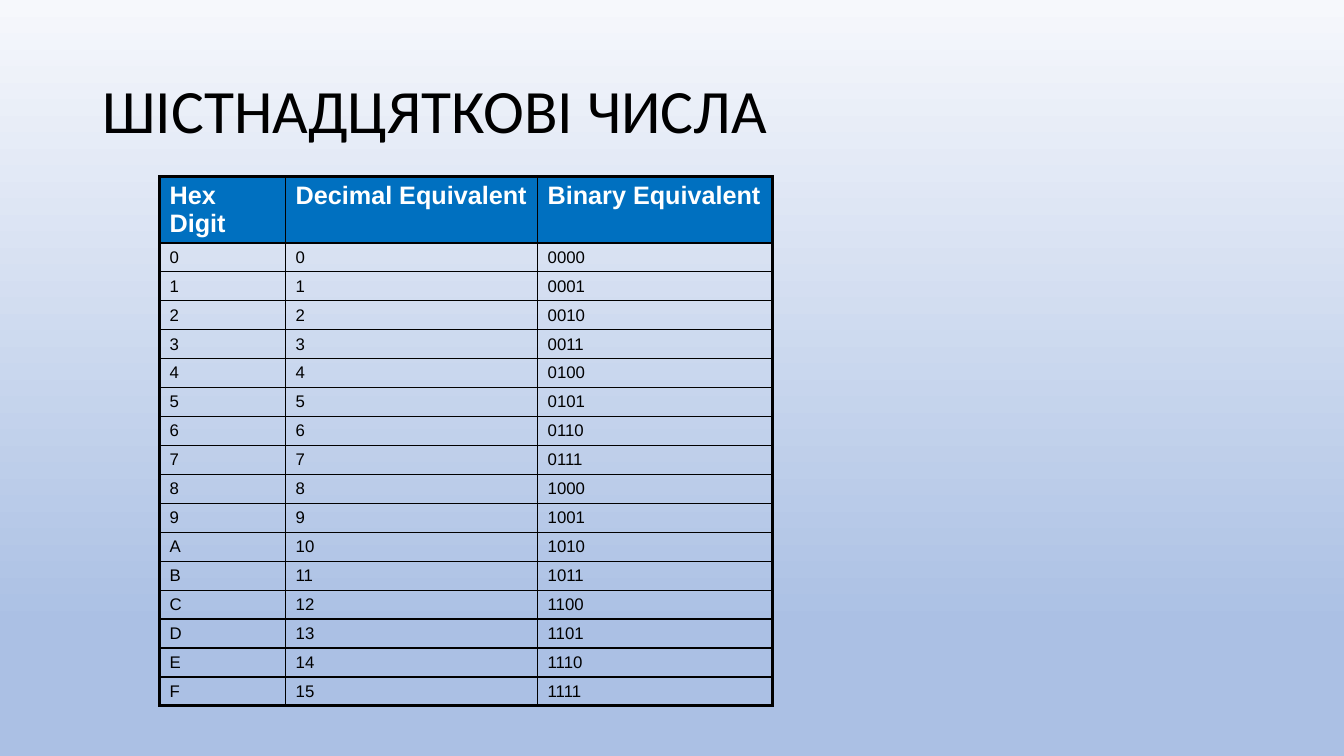
from lxml.etree import SubElement
from pptx import Presentation
from pptx.dml.color import RGBColor
from pptx.enum.text import MSO_ANCHOR, PP_ALIGN
from pptx.oxml.ns import qn
from pptx.util import Pt

COLORS = {
    "text": "000000",
    "border": "000000",
    "header": "0070C0",
    "header_text": "FFFFFF",
}
GRADIENT = [(0, "F6F8FC"), (83, "ABC0E4"), (100, "ABC0E4"), (100, "C7D5ED")]
HEADINGS = ["Hex Digit", "Decimal Equivalent", "Binary Equivalent"]
COLUMN_SHARES = [90, 180, 168]
HEADER_HEIGHT = 47.4
THIN, THICK = 1, 2.25


def format_text(paragraph, font_name, size, color, bold=False):
    """Format every run of a paragraph."""
    for run in paragraph.runs:
        run.font.name = font_name
        run.font.size = Pt(size)
        run.font.bold = bold
        run.font.color.rgb = RGBColor.from_string(COLORS[color])


def paint_background(slide):
    """Fill the slide with a vertical gradient."""
    fill = slide.background.fill
    fill.gradient()
    fill.gradient_angle = 270
    stops = slide.element.find(".//" + qn("a:gsLst"))
    for stop in list(stops):
        stops.remove(stop)
    for percent, color in GRADIENT:
        stop = SubElement(stops, qn("a:gs"), pos=str(percent * 1000))
        SubElement(stop, qn("a:srgbClr"), val=color)


def place_title(slide, left, top, width, height):
    """Place the title in its box."""
    title = slide.shapes.title
    title.left, title.top = Pt(left), Pt(top)
    title.width, title.height = Pt(width), Pt(height)
    title.text_frame.text = "ШІСТНАДЦЯТКОВІ ЧИСЛА"
    title.text_frame.vertical_anchor = MSO_ANCHOR.MIDDLE
    paragraph = title.text_frame.paragraphs[0]
    paragraph.alignment = PP_ALIGN.LEFT
    paragraph.line_spacing = 0.9
    format_text(paragraph, "Calibri", 44, "text")


def set_borders(cell, outer_sides):
    """Draw the cell's borders, thick on the table's outer sides."""
    properties = cell._tc.get_or_add_tcPr()
    for side in "LRTB":
        weight = THICK if side in outer_sides else THIN
        line = SubElement(properties, qn("a:ln" + side), w=str(Pt(weight)))
        fill = SubElement(line, qn("a:solidFill"))
        SubElement(fill, qn("a:srgbClr"), val=COLORS["border"])


def add_hex_table(slide, left, top, width, height):
    """Add the table of hexadecimal digits."""
    rows = [HEADINGS] + [[f"{n:X}", str(n), f"{n:04b}"] for n in range(16)]
    last_row, last_column = len(rows) - 1, len(HEADINGS) - 1
    frame = slide.shapes.add_table(
        len(rows), len(HEADINGS), Pt(left), Pt(top), Pt(width), Pt(height))
    table = frame.table
    table.first_row = table.horz_banding = False
    for column, share in zip(table.columns, COLUMN_SHARES):
        column.width = Pt(width * share / sum(COLUMN_SHARES))
    for r, values in enumerate(rows):
        is_header = r == 0
        table.rows[r].height = Pt(
            HEADER_HEIGHT if is_header else (height - HEADER_HEIGHT) / last_row)
        for c, value in enumerate(values):
            cell = table.cell(r, c)
            edges = {"L": c == 0, "R": c == last_column,
                     "T": is_header, "B": r == last_row}
            set_borders(cell, [side for side, outer in edges.items() if outer])
            cell.text_frame.text = value
            paragraph = cell.text_frame.paragraphs[0]
            if is_header:
                cell.fill.solid()
                cell.fill.fore_color.rgb = RGBColor.from_string(COLORS["header"])
                format_text(paragraph, "Arial", 18, "header_text", bold=True)
            else:
                cell.fill.background()
                format_text(paragraph, "Arial", 12, "text")


def main():
    """Build and save the presentation."""
    presentation = Presentation()
    presentation.slide_width, presentation.slide_height = Pt(960), Pt(540)
    slide = presentation.slides.add_slide(presentation.slide_layouts[5])
    paint_background(slide)
    place_title(slide, 66, 28.8, 828, 104.4)
    add_hex_table(slide, 114, 126, 438, 378.2)
    presentation.save("out.pptx")


if __name__ == "__main__":
    main()
